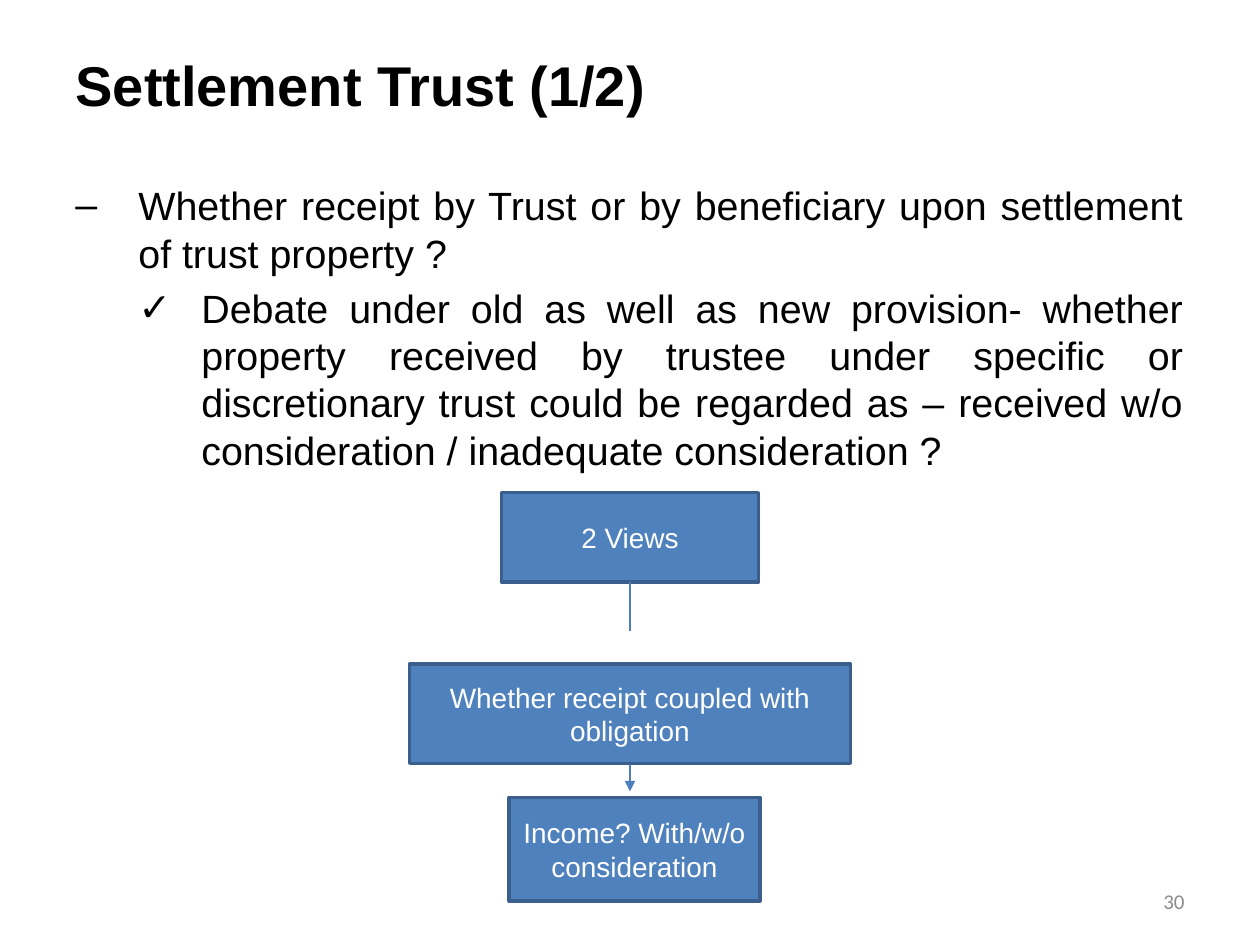
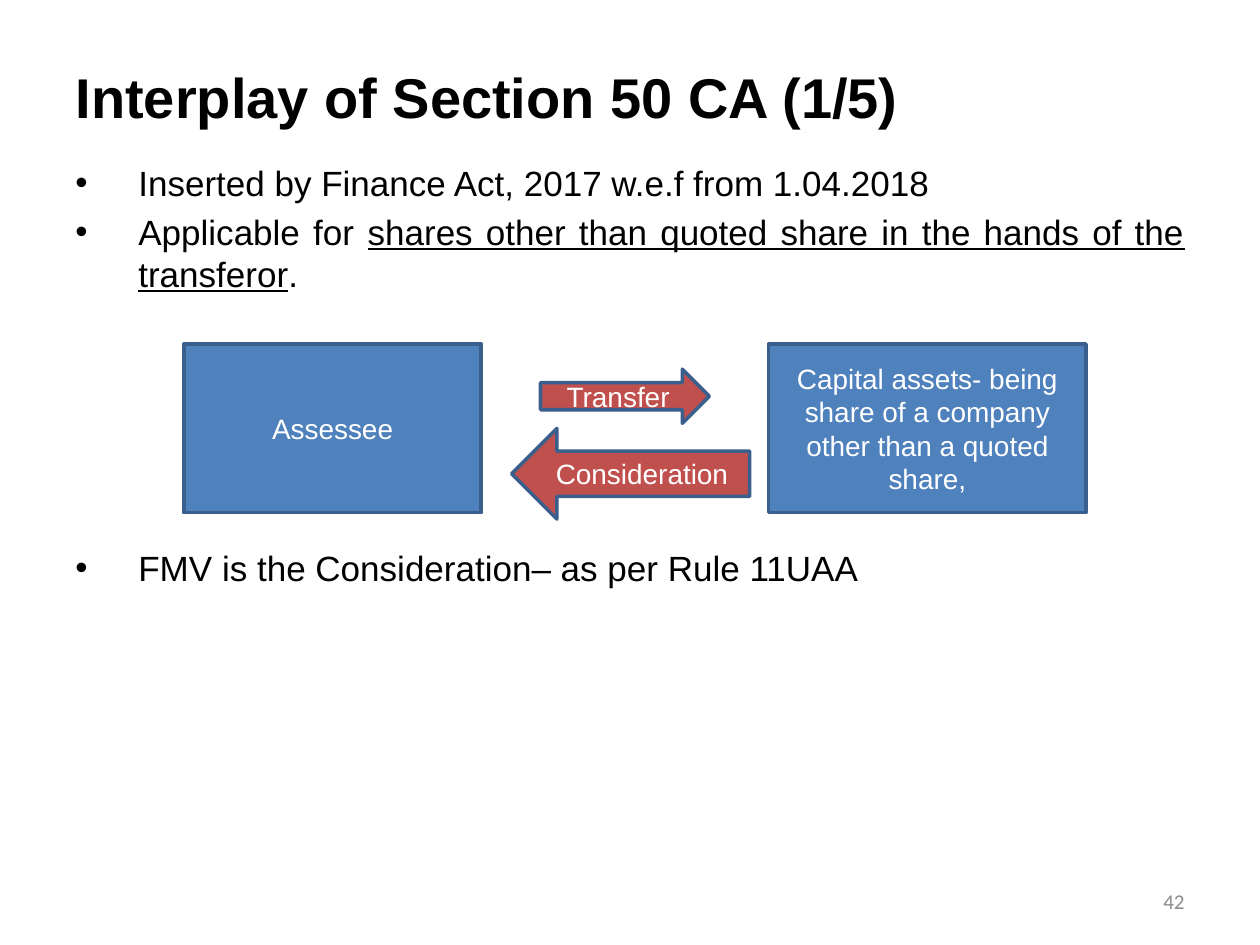
from lxml.etree import SubElement
from pptx import Presentation
from pptx.dml.color import RGBColor
from pptx.enum.shapes import MSO_CONNECTOR as Connector, MSO_SHAPE as Shape
from pptx.enum.text import MSO_ANCHOR as Anchor, PP_ALIGN as Align
from pptx.oxml.ns import qn
from pptx.util import Inches, Pt

BLACK, WHITE, GREY = "000000", "FFFFFF", "8C8C8C"
BLUE, RED, OUTLINE, LINK = "4F81BD", "C0504D", "3A5F8C", "4B7EBC"
MARGIN, CONTENT_WIDTH, INDENT = 0.5, 9, 0.5
TITLE_TOP = 0.3


def colour(value):
    """Turn a hex string into a colour."""
    return RGBColor.from_string(value)


def format_font(font, size, value, name="Arial", bold=False):
    """Set the face, size, colour and weight of a font."""
    font.name, font.size, font.bold = name, Pt(size), bold
    font.color.rgb = colour(value)


def add_page(deck, title, title_height, number):
    """Add a slide with its title and slide number."""
    page = deck.slides.add_slide(deck.slide_layouts[5])
    heading = page.shapes.title
    heading.left, heading.top = Inches(MARGIN), Inches(TITLE_TOP)
    heading.width, heading.height = Inches(CONTENT_WIDTH), Inches(title_height)
    frame = heading.text_frame
    frame.text = title
    frame.vertical_anchor = Anchor.MIDDLE
    para = frame.paragraphs[0]
    para.alignment = Align.LEFT
    format_font(para.runs[0].font, 32, BLACK, bold=True)
    add_number(page, number)
    return page


def add_number(page, number):
    """Write the slide number at the bottom right."""
    box = page.shapes.add_textbox(Inches(7.17), Inches(6.95), Inches(2.33), Inches(0.4))
    frame = box.text_frame
    frame.word_wrap = True
    frame.vertical_anchor = Anchor.MIDDLE
    frame.text = str(number)
    para = frame.paragraphs[0]
    para.alignment = Align.RIGHT
    format_font(para.runs[0].font, 12, GREY, "Calibri")


def add_bullet(para, mark, level):
    """Give a paragraph a bullet mark and a hanging indent."""
    properties = para._p.get_or_add_pPr()
    properties.set("marL", str(Inches(INDENT * level)))
    properties.set("indent", str(-Inches(INDENT)))
    SubElement(properties, qn("a:buFont"), typeface="Arial")
    SubElement(properties, qn("a:buChar"), char=mark)


def add_bullets(page, top, height, size, items):
    """Add justified bullets, each a mark, a level and spans of text and underline."""
    box = page.shapes.add_textbox(
        Inches(MARGIN), Inches(top), Inches(CONTENT_WIDTH), Inches(height))
    frame = box.text_frame
    frame.word_wrap = True
    for index, (mark, level, spans) in enumerate(items):
        para = frame.add_paragraph() if index else frame.paragraphs[0]
        add_bullet(para, mark, level)
        para.alignment = Align.JUSTIFY
        para.space_before = Pt(0.2 * size if index else 0)
        for text, underlined in spans:
            span = para.add_run()
            span.text = text
            format_font(span.font, size, BLACK)
            span.font.underline = underlined


def add_block(page, text, left, top, width, height, kind=Shape.RECTANGLE, fill=BLUE):
    """Add an outlined shape with a centred white label."""
    block = page.shapes.add_shape(
        kind, Inches(left), Inches(top), Inches(width), Inches(height))
    block.shadow.inherit = False
    block.fill.solid()
    block.fill.fore_color.rgb = colour(fill)
    block.line.color.rgb = colour(OUTLINE)
    block.line.width = Pt(2)
    frame = block.text_frame
    frame.word_wrap = True
    frame.vertical_anchor = Anchor.MIDDLE
    frame.text = text
    para = frame.paragraphs[0]
    para.alignment = Align.CENTER
    format_font(para.runs[0].font, 16, WHITE)
    return block


def add_drop(page, block, length, arrow=False):
    """Draw a line straight down from the bottom of a block."""
    centre, bottom = block.left + block.width // 2, block.top + block.height
    drop = page.shapes.add_connector(
        Connector.STRAIGHT, centre, bottom, centre, bottom + Inches(length))
    drop.begin_connect(block, 2)
    drop.line.color.rgb = colour(LINK)
    drop.line.width = Pt(0.75)
    if arrow:
        SubElement(drop.line._get_or_add_ln(), qn("a:tailEnd"), type="triangle")
    SubElement(drop._element.spPr, qn("a:effectLst"))


def build_settlement(deck):
    """Build the slide on settlement of trust property."""
    page = add_page(deck, "Settlement Trust (1/2)", 0.73, 30)
    add_bullets(page, 1.39, 2.45, 22.5, [
        ("–", 1, [("Whether receipt by Trust or by beneficiary upon settlement "
                   "of trust property ?", False)]),
        ("✓", 2, [("Debate under old as well as new provision- whether property "
                   "received by trustee under specific or discretionary trust could "
                   "be regarded as – received w/o consideration / inadequate "
                   "consideration ?", False)]),
    ])
    views = add_block(page, "2 Views", 3.98, 3.91, 2.04, 0.71)
    add_drop(page, views, 0.39)
    receipt = add_block(
        page, "Whether receipt coupled with obligation", 3.25, 5.27, 3.5, 0.79)
    add_drop(page, receipt, 0.22, arrow=True)
    add_block(page, "Income? With/w/o consideration", 4.04, 6.33, 1.99, 0.82)


def build_interplay(deck):
    """Build the slide on the transfer of unquoted shares."""
    page = add_page(deck, "Interplay of Section 50 CA (1/5)", 0.93, 42)
    add_bullets(page, 1.23, 1.25, 20, [
        ("•", 1, [("Inserted by Finance Act, 2017 w.e.f from 1.04.2018", False)]),
        ("•", 1, [("Applicable for ", False),
                  ("shares other than quoted share in the hands of the transferor", True),
                  (".", False)]),
    ])
    add_block(page, "Assessee", 1.46, 2.73, 2.36, 1.34)
    add_block(page, "Capital assets- being share of a company other than a quoted share,",
              6.1, 2.73, 2.52, 1.34)
    add_block(page, "Transfer", 4.29, 2.93, 1.34, 0.43, Shape.RIGHT_ARROW, RED)
    add_block(page, "Consideration", 4.06, 3.4, 1.89, 0.72, Shape.LEFT_ARROW, RED)
    add_bullets(page, 4.29, 0.45, 20, [
        ("•", 1, [("FMV is the Consideration– as per Rule 11UAA", False)]),
    ])


def main():
    """Build and save the deck."""
    deck = Presentation()
    deck.slide_width, deck.slide_height = Inches(10), Inches(7.5)
    build_settlement(deck)
    build_interplay(deck)
    deck.save("out.pptx")


if __name__ == "__main__":
    main()
